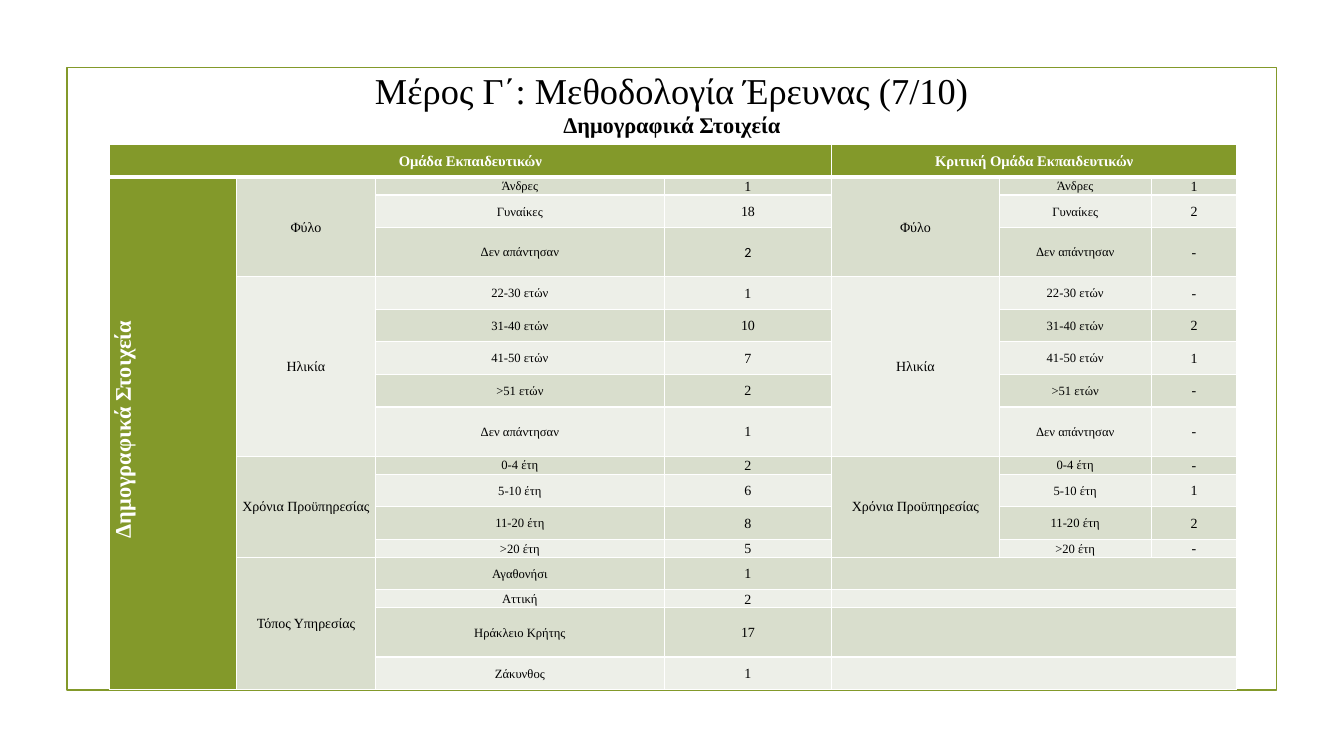
from dataclasses import dataclass

from lxml.etree import SubElement
from pptx import Presentation
from pptx.dml.color import RGBColor
from pptx.enum.shapes import MSO_SHAPE
from pptx.enum.text import MSO_ANCHOR, MSO_AUTO_SIZE, PP_ALIGN
from pptx.oxml.ns import qn
from pptx.util import Cm, Pt


@dataclass(frozen=True)
class Theme:
    olive: str = "83992A"
    band_dark: str = "D9DECD"
    band_light: str = "EDEFE8"
    white: str = "FFFFFF"
    black: str = "000000"
    serif: str = "Times New Roman"
    sans: str = "Calibri"
    title: float = 26
    subtitle: float = 16
    header: float = 10.5
    count: float = 10
    answer: float = 9


THEME = Theme()
COLUMN_WIDTHS = [3.21, 3.5, 7.28, 4.22, 4.22, 3.83, 2.16]
SHORT, MEDIUM, TALL = 0.45, 0.82, 1.24
TEACHERS_COLUMN, CRITICAL_COLUMN = 1, 4
GROUPS = [
    ("Φύλο", [
        ("Άνδρες", "1", "1", SHORT),
        ("Γυναίκες", "18", "2", MEDIUM),
        ("Δεν απάντησαν", "2", "-", TALL)]),
    ("Ηλικία", [
        ("22-30 ετών", "1", "-", MEDIUM),
        ("31-40 ετών", "10", "2", MEDIUM),
        ("41-50 ετών", "7", "1", MEDIUM),
        (">51 ετών", "2", "-", MEDIUM),
        ("Δεν απάντησαν", "1", "-", TALL)]),
    ("Χρόνια Προϋπηρεσίας", [
        ("0-4 έτη", "2", "-", SHORT),
        ("5-10 έτη", "6", "1", MEDIUM),
        ("11-20 έτη", "8", "2", MEDIUM),
        (">20 έτη", "5", "-", SHORT)]),
    ("Τόπος Υπηρεσίας", [
        ("Αγαθονήσι", "1", None, MEDIUM),
        ("Αττική", "2", None, SHORT),
        ("Ηράκλειο Κρήτης", "17", None, TALL),
        ("Ζάκυνθος", "1", None, MEDIUM)]),
]


def color(code):
    return RGBColor.from_string(code)


def add_frame(slide, left, top, width, height):
    frame = slide.shapes.add_shape(
        MSO_SHAPE.RECTANGLE, Cm(left), Cm(top), Cm(width), Cm(height))
    frame.shadow.inherit = False
    frame.fill.background()
    frame.line.color.rgb = color(THEME.olive)
    frame.line.width = Pt(1.25)


def fill_title(slide, left, top, width, height):
    title = slide.shapes.title
    title.left, title.top = Cm(left), Cm(top)
    title.width, title.height = Cm(width), Cm(height)
    title.text_frame.word_wrap = True
    title.text_frame.auto_size = MSO_AUTO_SIZE.SHAPE_TO_FIT_TEXT
    heading = title.text_frame.paragraphs[0]
    heading.alignment = PP_ALIGN.CENTER
    heading.font.name = THEME.serif
    heading.font.size = Pt(THEME.title)
    heading.font.color.rgb = color(THEME.black)
    heading.add_run().text = "Μέρος Γ΄: Μεθοδολογία Έρευνας (7/10)"
    heading.add_line_break()
    subtitle = heading.add_run()
    subtitle.text = "Δημογραφικά Στοιχεία"
    subtitle.font.size = Pt(THEME.subtitle)
    subtitle.font.bold = True


def style_cell(cell, row, fill):
    cell.margin_left = cell.margin_right = Cm(0.1)
    cell.margin_top = cell.margin_bottom = 0
    cell.vertical_anchor = MSO_ANCHOR.MIDDLE
    properties = cell._tc.get_or_add_tcPr()
    widths = {"lnL": 1, "lnR": 1,
              "lnT": 3 if row == 1 else 1, "lnB": 3 if row == 0 else 1}
    for side, width in widths.items():
        border = SubElement(properties, qn(f"a:{side}"), w=str(Pt(width)))
        SubElement(SubElement(border, qn("a:solidFill")),
                   qn("a:srgbClr"), val=THEME.white)
    cell.fill.solid()
    cell.fill.fore_color.rgb = color(fill)
    SubElement(cell.text_frame.paragraphs[0]._p, qn("a:endParaRPr"),
               sz=str(int(THEME.answer * 100)))


def write(cell, text, size, ink=THEME.black, bold=False, face=THEME.serif):
    entry = cell.text_frame.paragraphs[0]
    entry.add_run().text = text
    entry.alignment = PP_ALIGN.CENTER
    entry.line_spacing = 1.07
    entry.font.name = face
    entry.font.size = Pt(size)
    entry.font.bold = bold
    entry.font.color.rgb = color(ink)
    return entry


def add_demographics(slide, left, top):
    answers = [answer for _, group in GROUPS for answer in group]
    heights = [MEDIUM] + [answer[-1] for answer in answers]
    table = slide.shapes.add_table(
        len(heights), len(COLUMN_WIDTHS), Cm(left), Cm(top),
        Cm(sum(COLUMN_WIDTHS)), Cm(sum(heights))).table
    table.first_row = table.horz_banding = False
    for column, width in zip(table.columns, COLUMN_WIDTHS):
        column.width = Cm(width)
    for index, height in enumerate(heights):
        table.rows[index].height = Cm(height)
        band = THEME.band_dark if index % 2 else THEME.band_light
        for position in range(len(COLUMN_WIDTHS)):
            olive = index == 0 or position == 0
            style_cell(table.cell(index, position), index,
                       THEME.olive if olive else band)

    def span(first_row, first_column, last_row, last_column):
        corner = table.cell(first_row, first_column)
        corner.merge(table.cell(last_row, last_column))
        return corner

    last_row, last_column = len(answers), len(COLUMN_WIDTHS) - 1
    write(span(0, 0, 0, CRITICAL_COLUMN - 1), "Ομάδα Εκπαιδευτικών",
          THEME.header, THEME.white, True)
    write(span(0, CRITICAL_COLUMN, 0, last_column),
          "Κριτική Ομάδα Εκπαιδευτικών", THEME.header, THEME.white, True)
    side = span(1, 0, last_row, 0)
    side._tc.get_or_add_tcPr().set("vert", "vert270")
    label = write(side, "Δημογραφικά Στοιχεία", THEME.subtitle,
                  THEME.white, True)
    label._p.get_or_add_pPr().set("marL", str(Cm(0.2)))

    row = 1
    for category, group in GROUPS:
        group_end = row + len(group) - 1
        for start in (TEACHERS_COLUMN, CRITICAL_COLUMN):
            if start == TEACHERS_COLUMN or group[0][2] is not None:
                write(span(row, start, group_end, start), category, THEME.count)
        for answer, teachers, critical, height in group:
            for start, count in ((TEACHERS_COLUMN, teachers),
                                 (CRITICAL_COLUMN, critical)):
                if count is None:
                    span(row, start, row, last_column)
                    continue
                no_reply = (category, answer) == ("Φύλο", "Δεν απάντησαν")
                sans = no_reply and start == TEACHERS_COLUMN
                write(table.cell(row, start + 1), answer, THEME.answer)
                write(table.cell(row, start + 2), count, THEME.count,
                      face=THEME.sans if sans else THEME.serif)
            row += 1


def main():
    deck = Presentation()
    deck.slide_width, deck.slide_height = Cm(33.87), Cm(19.05)
    slide = deck.slides.add_slide(deck.slide_layouts[5])
    add_frame(slide, 1.69, 1.7, 30.48, 15.68)
    fill_title(slide, 2.05, 1.57, 29.77, 2.06)
    add_demographics(slide, 2.75, 3.64)
    deck.save("out.pptx")


if __name__ == "__main__":
    main()
